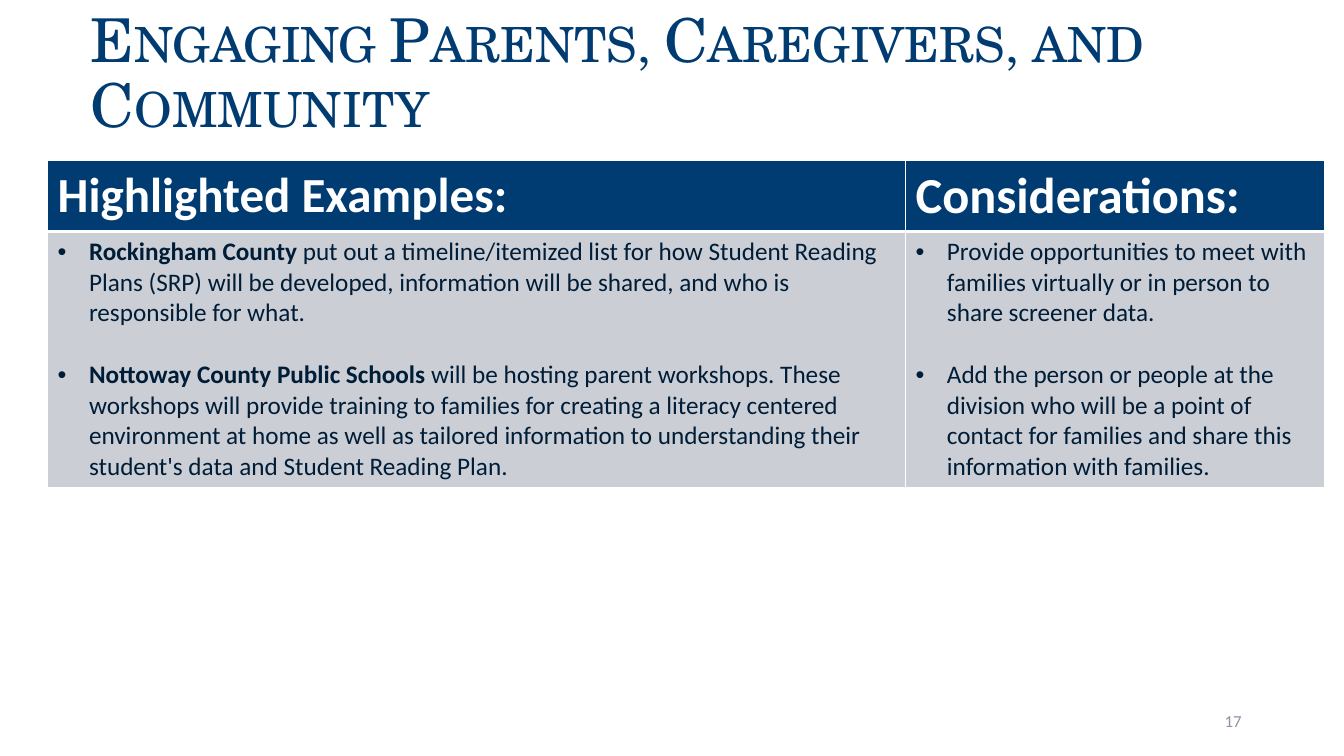
from lxml import etree
from pptx import Presentation
from pptx.dml.color import RGBColor
from pptx.enum.text import MSO_ANCHOR, PP_ALIGN
from pptx.oxml.ns import qn
from pptx.util import Cm, Pt

BOTTOM, MIDDLE = MSO_ANCHOR.BOTTOM, MSO_ANCHOR.MIDDLE
LEFT, RIGHT = PP_ALIGN.LEFT, PP_ALIGN.RIGHT

NAVY = RGBColor(0x00, 0x3C, 0x71)
INK = RGBColor(0x00, 0x1D, 0x37)
MIST = RGBColor(0xCC, 0xCE, 0xD5)
SLATE = RGBColor(0x8C, 0x92, 0xA5)
WHITE = RGBColor(0xFF, 0xFF, 0xFF)

TITLE = "Engaging Parents, Caregivers, and Community"
NUMBER = "17"

# Each column: heading, heading size, width in cm, bullets as (bold lead, rest)
COLUMNS = [
    ("Highlighted Examples:", 35, 21.62, [
        ("Rockingham County",
         " put out a timeline/itemized list for how Student Reading Plans (SRP) "
         "will be developed, information will be shared, and who is responsible "
         "for what."),
        ("Nottoway County Public Schools",
         " will be hosting parent workshops. These workshops will provide "
         "training to families for creating a literacy centered environment at "
         "home as well as tailored information to understanding their student's "
         "data and Student Reading Plan."),
    ]),
    ("Considerations:", 36, 10.56, [
        ("", "Provide opportunities to meet with families virtually or in person "
             "to share screener data."),
        ("", "Add the person or people at the division who will be a point of "
             "contact for families and share this information with families."),
    ]),
]
ROWS = [1.78, 6.45]
GAP = 22
HANG = Cm(0.79)

TITLE_FONT = {"name": "TeX Gyre Schola", "size": Pt(43.2)}
NUMBER_FONT = {"name": "Calibri", "size": Pt(12)}
HEAD_FONT = {"name": "Calibri", "bold": True}
BODY_FONT = {"name": "Calibri", "size": Pt(18)}


def write(para, text, color, **form):
    run = para.add_run()
    run.text = text
    run.font.color.rgb = color
    for key, value in form.items():
        setattr(run.font, key, value)
    return run


def add_box(slide, place, anchor, align):
    """Add a wrapped text box; return its frame and first paragraph."""
    frame = slide.shapes.add_textbox(*map(Cm, place)).text_frame
    frame.word_wrap = True
    frame.vertical_anchor = anchor
    para = frame.paragraphs[0]
    para.alignment = align
    return frame, para


def paint(cell, color, top, bottom):
    """Give a cell white borders and a solid fill."""
    props = cell._tc.get_or_add_tcPr()
    for side, width in (("L", 1), ("R", 1), ("T", top), ("B", bottom)):
        line = etree.SubElement(props, qn(f"a:ln{side}"), w=str(Pt(width)))
        fill = etree.SubElement(line, qn("a:solidFill"))
        etree.SubElement(fill, qn("a:srgbClr"), val=str(WHITE))
    cell.fill.solid()
    cell.fill.fore_color.rgb = color


def add_bullet(para):
    props = para._p.get_or_add_pPr()
    props.set("marL", str(HANG))
    props.set("indent", str(-HANG))
    etree.SubElement(props, qn("a:buFont"), typeface="Arial")
    etree.SubElement(props, qn("a:buChar"), char="•")


def add_title(slide):
    frame, para = add_box(slide, (0, 0, 33.87, 3.68), BOTTOM, LEFT)
    frame.margin_left = Cm(2.29)
    para.line_spacing = 0.9
    run = write(para, TITLE, NAVY, **TITLE_FONT)
    run.font._element.set("cap", "small")


def add_grid(slide):
    wide = sum(col[2] for col in COLUMNS)
    table = slide.shapes.add_table(
        len(ROWS), len(COLUMNS), Cm(1.2), Cm(4.05), Cm(wide), Cm(sum(ROWS))).table
    for row, high in zip(table.rows, ROWS):
        row.height = Cm(high)
    for i, (head, size, width, points) in enumerate(COLUMNS):
        table.columns[i].width = Cm(width)
        top, body = table.cell(0, i), table.cell(1, i)
        paint(top, NAVY, 1, 3)
        paint(body, MIST, 3, 1)
        write(top.text_frame.paragraphs[0], head, WHITE, size=Pt(size), **HEAD_FONT)
        frame = body.text_frame
        for j, (lead, rest) in enumerate(points):
            para = frame.add_paragraph() if j else frame.paragraphs[0]
            para.space_before = Pt(GAP if j else 0)
            add_bullet(para)
            if lead:
                write(para, lead, INK, bold=True, **BODY_FONT)
            write(para, rest, INK, bold=False, **BODY_FONT)


def main():
    deck = Presentation()
    deck.slide_width, deck.slide_height = Cm(33.87), Cm(19.05)
    slide = deck.slides.add_slide(deck.slide_layouts[6])
    add_title(slide)
    add_grid(slide)
    para = add_box(slide, (23.92, 17.66, 7.62, 1.01), MIDDLE, RIGHT)[1]
    write(para, NUMBER, SLATE, **NUMBER_FONT)
    deck.save("out.pptx")


if __name__ == "__main__":
    main()
